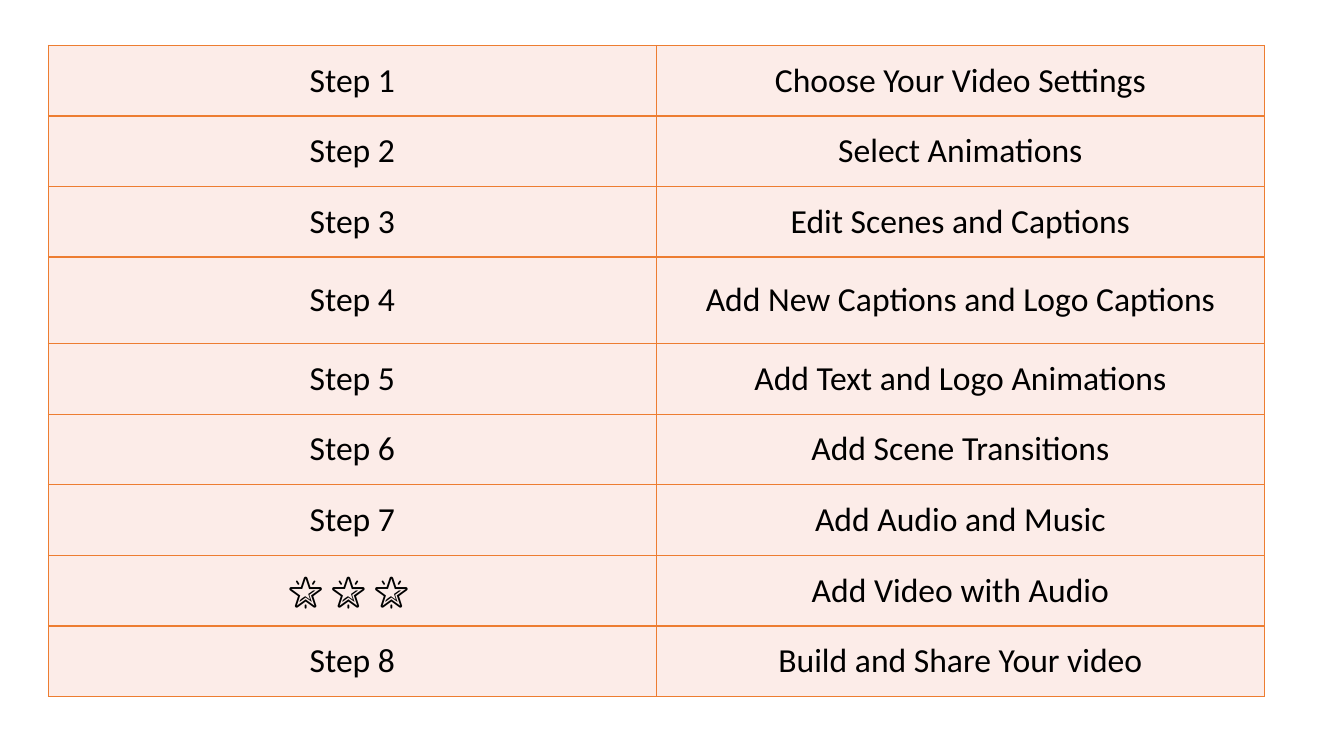
from dataclasses import dataclass

from lxml.etree import SubElement
from pptx import Presentation
from pptx.dml.color import RGBColor
from pptx.enum.text import MSO_ANCHOR, PP_ALIGN
from pptx.oxml.ns import qn
from pptx.table import _Cell
from pptx.util import Inches, Pt

TEXT, FILL, BORDER = "000000", "FCECE8", "ED7D31"
BORDER_POINTS = 1
MARGIN = Inches(0.08)
COLUMN_WIDTH = 6.03


@dataclass
class Step:
    label: str
    action: str
    height: float = 0.7


STEPS = [
    Step("Step 1", "Choose Your Video Settings"),
    Step("Step 2", "Select Animations"),
    Step("Step 3", "Edit Scenes and Captions"),
    Step("Step 4", "Add New Captions and Logo Captions", 0.86),
    Step("Step 5", "Add Text and Logo Animations"),
    Step("Step 6", "Add Scene Transitions"),
    Step("Step 7", "Add Audio and Music"),
    Step("🌟 🌟 🌟 ", "Add Video with Audio"),
    Step("Step 8", "Build and Share Your video"),
]


def color(value: str) -> RGBColor:
    return RGBColor.from_string(value)


def add_borders(cell: _Cell) -> None:
    properties = cell._tc.get_or_add_tcPr()
    # Border lines must come before the cell fill
    for index, side in enumerate(("a:lnL", "a:lnR", "a:lnT", "a:lnB")):
        line = SubElement(properties, qn(side), w=str(Pt(BORDER_POINTS)))
        fill = SubElement(line, qn("a:solidFill"))
        SubElement(fill, qn("a:srgbClr"), val=BORDER)
        properties.insert(index, line)


def fill_cell(cell: _Cell, text: str) -> None:
    cell.fill.solid()
    cell.fill.fore_color.rgb = color(FILL)
    cell.vertical_anchor = MSO_ANCHOR.MIDDLE
    cell.margin_left = cell.margin_right = MARGIN
    cell.margin_top = cell.margin_bottom = MARGIN
    add_borders(cell)
    cell.text = text
    para = cell.text_frame.paragraphs[0]
    para.alignment = PP_ALIGN.CENTER
    para.font.name = "Calibri"
    para.font.size = Pt(24)
    para.font.color.rgb = color(TEXT)


def main() -> None:
    deck = Presentation()
    deck.slide_width, deck.slide_height = Inches(13.33), Inches(7.5)
    page = deck.slides.add_slide(deck.slide_layouts[6])

    # Table of steps
    total_height = sum(step.height for step in STEPS)
    table = page.shapes.add_table(
        len(STEPS), 2, Inches(0.48), Inches(0.45),
        Inches(2 * COLUMN_WIDTH), Inches(total_height),
    ).table
    table.first_row = table.horz_banding = False

    # One row per step
    for row, step in zip(table.rows, STEPS):
        row.height = Inches(step.height)
        for cell, text in zip(row.cells, (step.label, step.action)):
            fill_cell(cell, text)

    deck.save("out.pptx")


if __name__ == "__main__":
    main()
